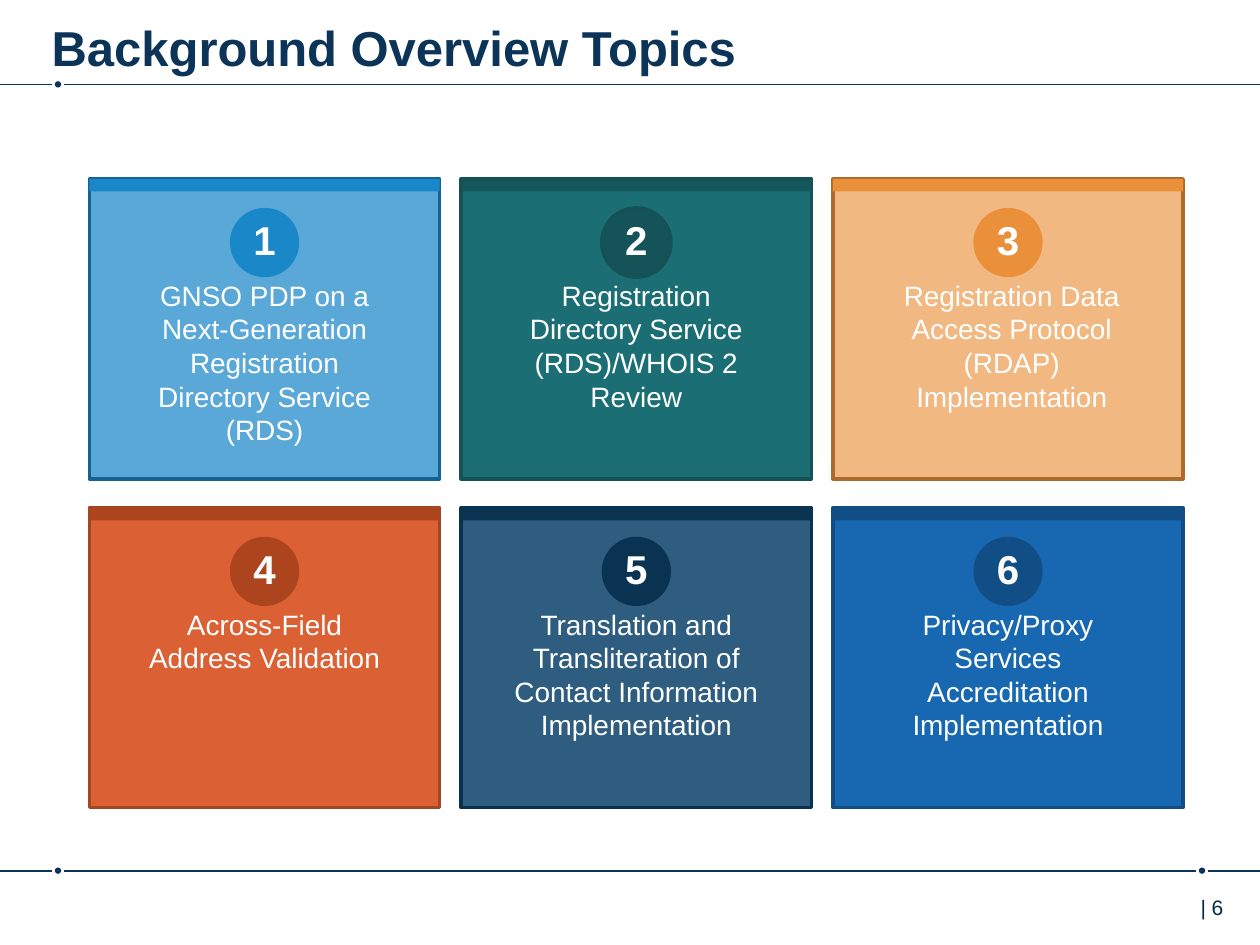
from dataclasses import dataclass
from typing import Optional

from lxml.etree import SubElement
from pptx import Presentation
from pptx.dml.color import RGBColor
from pptx.enum.shapes import MSO_CONNECTOR as Connector, MSO_SHAPE as Preset
from pptx.enum.text import MSO_ANCHOR as Anchor, MSO_AUTO_SIZE as AutoSize, PP_ALIGN as Align
from pptx.oxml.ns import qn
from pptx.util import Inches, Pt

WIDTH, HEIGHT = 10, 7.5
GRID_LEFT, GRID_TOP = 0.71, 1.42
COLUMN_STEP, ROW_STEP = 2.95, 2.61
COLUMNS = 3
CARD_WIDTH, CARD_HEIGHT, BAND_HEIGHT = 2.78, 2.38, 0.1
BADGE_SIZE, LABEL_WIDTH, DOT_SIZE = 0.55, 2.27, 0.05
NAVY, WHITE = "0C3458", "FFFFFF"


@dataclass(frozen=True)
class Area:
    left: float
    top: float
    width: float
    height: float


@dataclass(frozen=True)
class Topic:
    label: str
    body: str
    border: str
    accent: str
    body_opacity: int = 100
    band_opacity: int = 100
    badge_border: Optional[str] = None
    label_shift: float = 0


TOPICS = [
    Topic("GNSO PDP on a Next-Generation Registration Directory Service (RDS)",
          "1A87C9", "136495", "1A87C9", body_opacity=72),
    Topic("Registration Directory Service (RDS)/WHOIS 2 Review",
          "1B6F74", "145256", "145357", band_opacity=80, badge_border="145256"),
    Topic("Registration Data Access Protocol (RDAP) Implementation",
          "EA903A", "AD6B2B", "EA903A", body_opacity=63, label_shift=0.03),
    Topic("Across-Field Address Validation", "DB6033", "A24726", "AC441E"),
    Topic("Translation and Transliteration of Contact Information Implementation",
          "0D436C", "0A3250", "0A3251", body_opacity=86),
    Topic("Privacy/Proxy Services Accreditation Implementation",
          "1768B1", "114D83", "114E85"),
]


def colour(value: str) -> RGBColor:
    return RGBColor.from_string(value)


def place(area: Area) -> list:
    return [Inches(n) for n in (area.left, area.top, area.width, area.height)]


def add_block(page, preset, area: Area, fill: str, border: Optional[str] = None,
              opacity: int = 100) -> None:
    shape = page.shapes.add_shape(preset, *place(area))
    shape.shadow.inherit = False
    shape.fill.solid()
    shape.fill.fore_color.rgb = colour(fill)
    if opacity < 100:
        tint = shape.fill._xPr.find(qn("a:solidFill"))[0]
        SubElement(tint, qn("a:alpha")).set("val", str(opacity * 1000))
    if border:
        shape.line.color.rgb = colour(border)
        shape.line.width = Pt(2)
    else:
        shape.line.fill.background()


def write(para, text: str, size: float, tone: str, bold: bool = False) -> None:
    span = para.add_run()
    span.text = text
    span.font.name = "Arial"
    span.font.size = Pt(size)
    span.font.bold = bold
    span.font.color.rgb = colour(tone)


def add_text(page, area: Area, text: str, size: float, tone: str,
             bold: bool = False, align=Align.CENTER) -> None:
    box = page.shapes.add_textbox(*place(area))
    box.text_frame.word_wrap = True
    para = box.text_frame.paragraphs[0]
    para.alignment = align
    write(para, text, size, tone, bold)


def add_rule(page, start: float, end: float, y: float) -> None:
    rule = page.shapes.add_connector(
        Connector.STRAIGHT, Inches(start), Inches(y), Inches(end), Inches(y))
    rule.line.color.rgb = colour(NAVY)
    rule.line.width = Pt(1)
    SubElement(rule._element.spPr, qn("a:effectLst"))


def add_dotted_rule(page, y: float, dots: list[float]) -> None:
    start = 0
    for dot in dots:
        add_rule(page, start, dot - 0.05, y)
        add_block(page, Preset.OVAL,
                  Area(dot - DOT_SIZE / 2, y - DOT_SIZE / 2, DOT_SIZE, DOT_SIZE), NAVY)
        start = dot + 0.05
    add_rule(page, start, WIDTH, y)


def add_title(page, text: str) -> None:
    title = page.shapes.title
    title.left, title.top, title.width, title.height = place(Area(0.41, 0.05, 8.76, 0.49))
    frame = title.text_frame
    frame.auto_size = AutoSize.NONE
    frame.vertical_anchor = Anchor.TOP
    frame.margin_left = frame.margin_right = 0
    frame.margin_top, frame.margin_bottom = Inches(0.09), Inches(0)
    para = frame.paragraphs[0]
    para.alignment = Align.LEFT
    write(para, text, 28, NAVY, True)


def add_topic(page, index: int, topic: Topic) -> None:
    row, column = divmod(index, COLUMNS)
    left = GRID_LEFT + column * COLUMN_STEP
    top = GRID_TOP + row * ROW_STEP
    add_block(page, Preset.RECTANGLE, Area(left, top, CARD_WIDTH, CARD_HEIGHT),
              topic.body, topic.border, topic.body_opacity)
    add_block(page, Preset.RECTANGLE, Area(left, top, CARD_WIDTH, BAND_HEIGHT),
              topic.accent, opacity=topic.band_opacity)
    add_block(page, Preset.OVAL,
              Area(left + (CARD_WIDTH - BADGE_SIZE) / 2, top + 0.23, BADGE_SIZE, BADGE_SIZE),
              topic.accent, topic.badge_border)
    add_text(page, Area(left + (CARD_WIDTH - LABEL_WIDTH) / 2 + topic.label_shift,
                        top + 0.74, LABEL_WIDTH, 1.18), topic.label, 16, WHITE)
    add_text(page, Area(left, top + 0.24, CARD_WIDTH, 0.49),
             str(index + 1), 23, WHITE, True)


def main() -> None:
    deck = Presentation()
    deck.slide_width, deck.slide_height = Inches(WIDTH), Inches(HEIGHT)
    page = deck.slides.add_slide(deck.slide_layouts[5])
    add_dotted_rule(page, 0.67, [0.46])
    add_dotted_rule(page, 6.91, [0.46, 9.54])
    add_text(page, Area(9.43, 7.05, 0.57, 0.4), "| 6", 12, "002B49", align=Align.LEFT)
    for index, topic in enumerate(TOPICS):
        add_topic(page, index, topic)
    add_title(page, "Background Overview Topics")
    deck.save("out.pptx")


if __name__ == "__main__":
    main()
